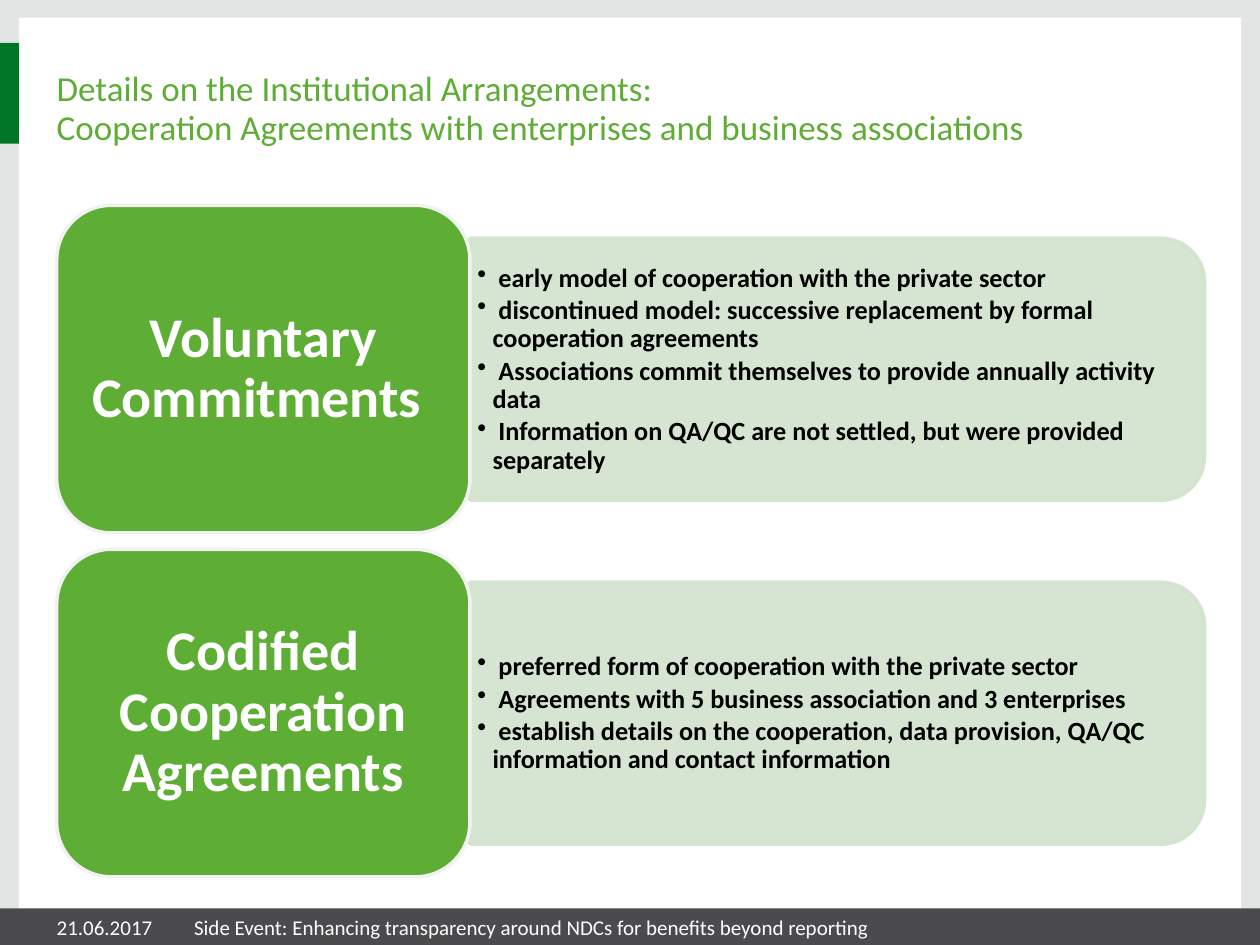
from lxml import etree
from pptx import Presentation
from pptx.dml.color import RGBColor
from pptx.enum.shapes import MSO_SHAPE
from pptx.enum.text import MSO_ANCHOR, PP_ALIGN
from pptx.oxml.ns import qn
from pptx.util import Inches, Pt

RECT = MSO_SHAPE.RECTANGLE
ROUNDED = MSO_SHAPE.ROUNDED_RECTANGLE
ROUND_TOP = MSO_SHAPE.ROUND_2_SAME_RECTANGLE
MIDDLE, BOTTOM = MSO_ANCHOR.MIDDLE, MSO_ANCHOR.BOTTOM
LEFT, CENTER = PP_ALIGN.LEFT, PP_ALIGN.CENTER

FONT = "Calibri"
COLORS = {
    "frame": "E3E4E4",
    "white": "FFFFFF",
    "footer": "4B4B4D",
    "accent": "007626",
    "green": "5EAD35",
    "panel": "D2E3CE",
    "outline": "F2F2F2",
    "black": "000000",
}

AGREEMENT_TYPES = [
    ("Voluntary Commitments ", [
        " early model of cooperation with the private sector",
        " discontinued model: successive replacement by formal cooperation agreements",
        " Associations commit themselves to provide annually activity data",
        " Information on QA/QC are not settled, but were provided separately",
    ]),
    ("Codified Cooperation Agreements", [
        " preferred form of cooperation with the private sector",
        " Agreements with 5 business association and 3 enterprises",
        " establish details on the cooperation, data provision, QA/QC information and contact information",
    ]),
]


def rgb(name):
    return RGBColor.from_string(COLORS[name])


def add_block(slide, kind, box, fill, outline=None):
    block = slide.shapes.add_shape(kind, *map(Inches, box))
    block.shadow.inherit = False
    block.fill.solid()
    block.fill.fore_color.rgb = rgb(fill)
    if outline:
        block.line.color.rgb = rgb(outline)
        block.line.width = Pt(2)
    else:
        block.line.fill.background()
    return block


def set_frame(frame, anchor, side=0, top=0):
    frame.word_wrap = True
    frame.vertical_anchor = anchor
    frame.margin_left = frame.margin_right = Inches(side)
    frame.margin_top = frame.margin_bottom = Inches(top)


def write(paragraph, lines, size, color, bold=False, align=LEFT, spacing=None):
    paragraph.alignment = align
    paragraph.line_spacing = spacing
    for index, line in enumerate(lines):
        if index:
            paragraph.add_line_break()
        run = paragraph.add_run()
        run.text = line
        run.font.name = FONT
        run.font.size = Pt(size)
        run.font.bold = bold
        run.font.color.rgb = rgb(color)


def add_text(slide, box, anchor, lines, size, color, spacing=None):
    frame = slide.shapes.add_textbox(*map(Inches, box)).text_frame
    set_frame(frame, anchor)
    write(frame.paragraphs[0], lines, size, color, spacing=spacing)


def add_bullet(paragraph, indent):
    properties = paragraph._p.get_or_add_pPr()
    properties.set("marL", str(Inches(indent)))
    properties.set("indent", str(-Inches(indent)))
    etree.SubElement(properties, qn("a:buChar")).set("char", "•")


def make_translucent(panel, percent):
    for color in panel._element.spPr.iter(qn("a:srgbClr")):
        etree.SubElement(color, qn("a:alpha")).set("val", str(percent * 1000))


def add_backdrop(slide, width, height):
    edge, footer_top = 0.15, 7.21
    add_block(slide, RECT, (0, 0, width, height), "frame")
    add_block(slide, RECT, (edge, 0.14, width - 2 * edge, 7.18), "white")
    add_block(slide, RECT, (0, footer_top, width, height - footer_top), "footer")
    add_block(slide, RECT, (0, 0.34, edge, 0.8), "accent")


def add_title(slide, box):
    add_text(slide, box, BOTTOM, [
        "Details on the Institutional Arrangements:",
        "Cooperation Agreements with enterprises and business associations",
    ], 20, "green", Pt(22))


def add_agreement_row(slide, box, heading, points):
    left, top, width, height = box
    label_width = 3.28
    panel_left, panel_width = left + label_width, width - label_width
    panel_height = height * 0.8
    middle = top + height / 2

    panel = add_block(slide, ROUND_TOP, (
        panel_left + (panel_width - panel_height) / 2,
        middle - panel_width / 2, panel_height, panel_width,
    ), "panel", "panel")
    panel.rotation = 90
    make_translucent(panel, 90)

    details = slide.shapes.add_textbox(*map(Inches, (
        panel_left, middle - 0.93, panel_width - 0.1, 1.87))).text_frame
    set_frame(details, MIDDLE, 0.06, 0.03)
    for index, point in enumerate(points):
        paragraph = details.add_paragraph() if index else details.paragraphs[0]
        add_bullet(paragraph, 0.12)
        write(paragraph, [point], 15, "black", bold=True, spacing=0.9)
        paragraph.space_after = Pt(2.25)

    label = add_block(slide, ROUNDED, (left, top, label_width, height),
                      "green", "outline").text_frame
    set_frame(label, MIDDLE, 0.13, 0.07)
    write(label.paragraphs[0], [heading], 32, "white", True, CENTER, 0.9)


def add_footer(slide, box):
    left, top, width, height = box
    date_width = 1.09
    add_text(slide, (left, top, date_width, height), MIDDLE,
             ["21.06.2017"], 12, "white")
    add_text(slide, (left + date_width, top, width - date_width, height), MIDDLE,
             ["Side Event: Enhancing transparency around NDCs for benefits beyond reporting"],
             12, "white")


def main():
    width, height = 10, 7.5
    deck = Presentation()
    deck.slide_width, deck.slide_height = Inches(width), Inches(height)
    slide = deck.slides.add_slide(deck.slide_layouts[6])

    margin, row_height, row_step = 0.45, 2.6, 2.73
    add_backdrop(slide, width, height)
    add_title(slide, (margin, 0.51, 9, 0.66))
    for index, (heading, points) in enumerate(AGREEMENT_TYPES):
        row = (margin, 1.63 + index * row_step, 9.11, row_height)
        add_agreement_row(slide, row, heading, points)
    add_footer(slide, (margin, 7.21, 7.08, 0.29))
    deck.save("out.pptx")


if __name__ == "__main__":
    main()
